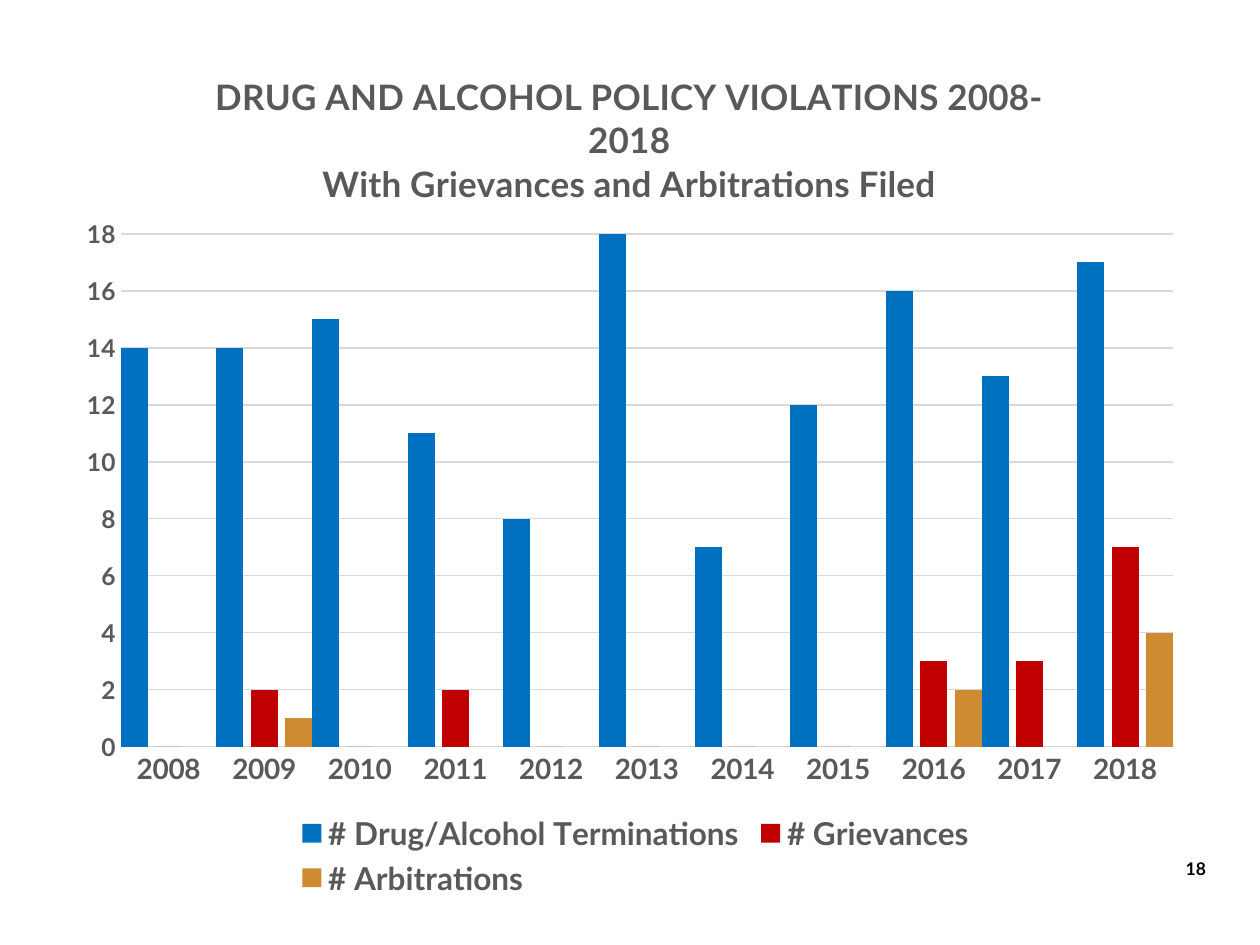
"""Build a slide with a column chart of policy violations by year."""
from lxml.etree import SubElement
from pptx import Presentation
from pptx.chart.data import CategoryChartData as Data
from pptx.dml.color import RGBColor as Rgb
from pptx.enum.chart import XL_CHART_TYPE as Kind, XL_LEGEND_POSITION as Spot, XL_TICK_MARK as Tick
from pptx.enum.text import MSO_ANCHOR as Anchor, PP_ALIGN as Align
from pptx.oxml.ns import qn
from pptx.util import Inches, Pt

GREY, PALE = "595959", "D9D9D9"


def style(font, size, color=GREY):
    font.name, font.size, font.bold = "Lato", Pt(size), True
    font.color.rgb = Rgb.from_string(color)


def place(part, index, **share):
    old = part.find(qn("c:layout"))
    if old is not None:
        part.remove(old)
    node = SubElement(part, qn("c:layout"))
    part.insert(index, node)
    box = SubElement(node, qn("c:manualLayout"))
    if part.tag == qn("c:plotArea"):
        SubElement(box, qn("c:layoutTarget")).set("val", "inner")
    for key in ("x", "y"):
        SubElement(box, qn(f"c:{key}Mode")).set("val", "edge")
    for key, size in share.items():
        SubElement(box, qn(f"c:{key}")).set("val", str(size))


deck = Presentation()
deck.slide_width, deck.slide_height = Inches(10), Inches(7.5)
slide = deck.slides.add_slide(deck.slide_layouts[6])

rows = [
    ("# Drug/Alcohol Terminations", (14, 14, 15, 11, 8, 18, 7, 12, 16, 13, 17), "0070C0"),
    ("# Grievances", (0, 2, 0, 2, 0, 0, 0, 0, 3, 3, 7), "C00000"),
    ("# Arbitrations", (0, 1, 0, 0, 0, 0, 0, 0, 2, 0, 4), "CF8B31"),
]
data = Data()
data.categories = [str(year) for year in range(2008, 2019)]
for name, vals, _ in rows:
    data.add_series(name, vals)
frame = slide.shapes.add_chart(
    Kind.COLUMN_CLUSTERED, Inches(0.51), Inches(0.27), Inches(8.98), Inches(6.9), data)
chart = frame.chart
chart.font.name, chart.font.size = "Lato", Pt(10)

plot = chart.plots[0]
plot.gap_width, plot.overlap, plot.vary_by_categories = 0, -27, False
for bars, (_, _, color) in zip(plot.series, rows):
    bars.format.fill.solid()
    bars.format.fill.fore_color.rgb = Rgb.from_string(color)

chart.has_title = True
title = chart.chart_title.text_frame
title.text = "DRUG AND ALCOHOL POLICY VIOLATIONS 2008-2018\nWith Grievances and Arbitrations Filed"
for para in title.paragraphs:
    style(para.runs[0].font, 20)

chart.has_legend = True
chart.legend.position = Spot.BOTTOM
chart.legend.include_in_layout = False
style(chart.legend.font, 18)

years, count = chart.category_axis, chart.value_axis
for axis, size in ((years, 16), (count, 14)):
    axis.major_tick_mark = axis.minor_tick_mark = Tick.NONE
    style(axis.tick_labels.font, size)
count.minimum_scale, count.maximum_scale, count.major_unit = 0, 18, 2
count.format.line.fill.background()
for line in (years.format.line, count.major_gridlines.format.line):
    line.color.rgb = Rgb.from_string(PALE)
    line.width = Pt(0.75)

root = chart.element.find(qn("c:chart"))
place(root.find(qn("c:title")), 1, x=0.13, y=0.04)
place(root.find(qn("c:plotArea")), 0, x=0.05, y=0.23, w=0.93, h=0.59)
place(root.find(qn("c:legend")), 1, x=0.2, y=0.89, w=0.61, h=0.11)

note = slide.shapes.add_textbox(Inches(9.11), Inches(6.69), Inches(0.56), Inches(0.4)).text_frame
note.word_wrap, note.vertical_anchor = True, Anchor.MIDDLE
note.text = "18"
note.paragraphs[0].alignment = Align.RIGHT
style(note.paragraphs[0].runs[0].font, 10, "000000")

deck.save("out.pptx")
